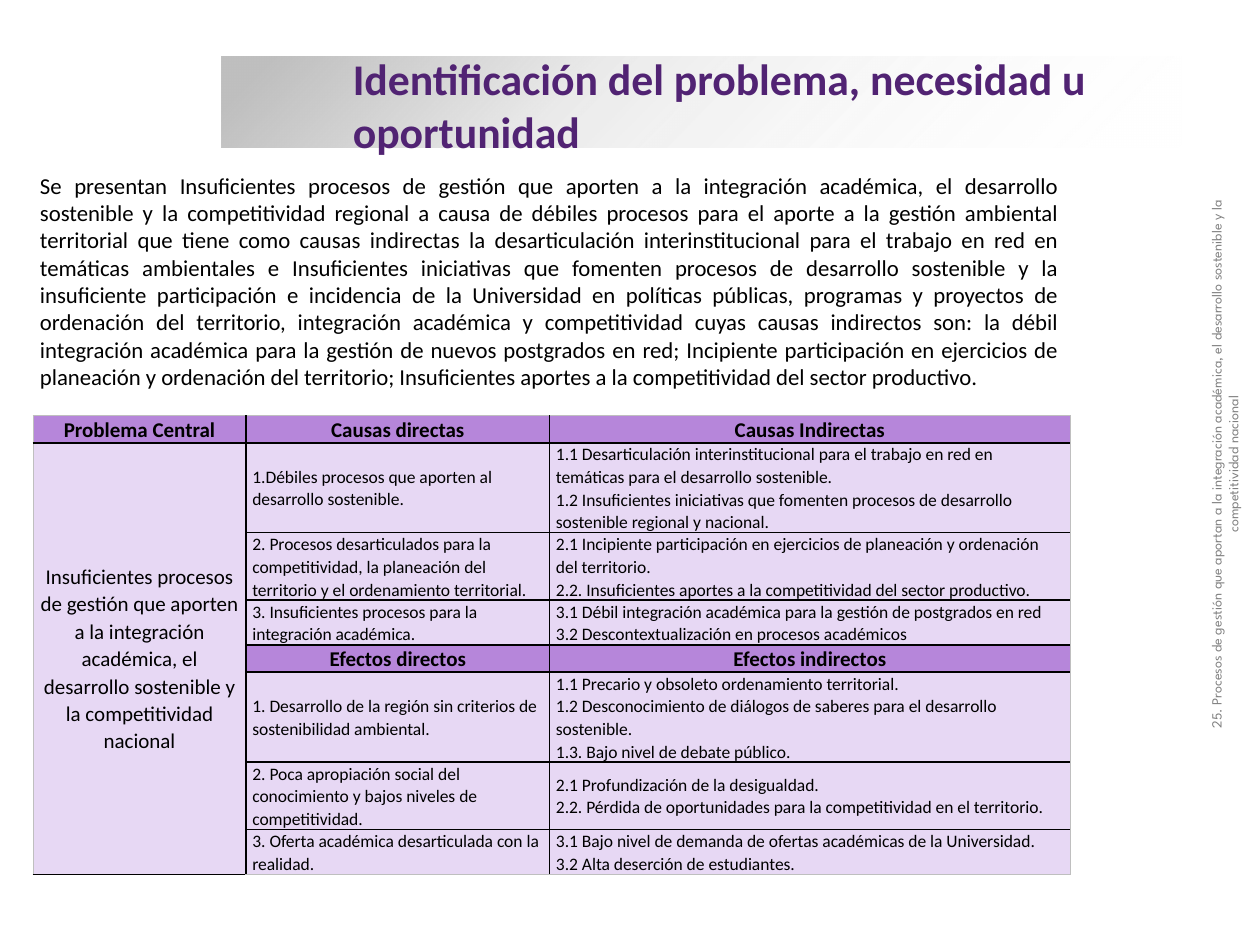
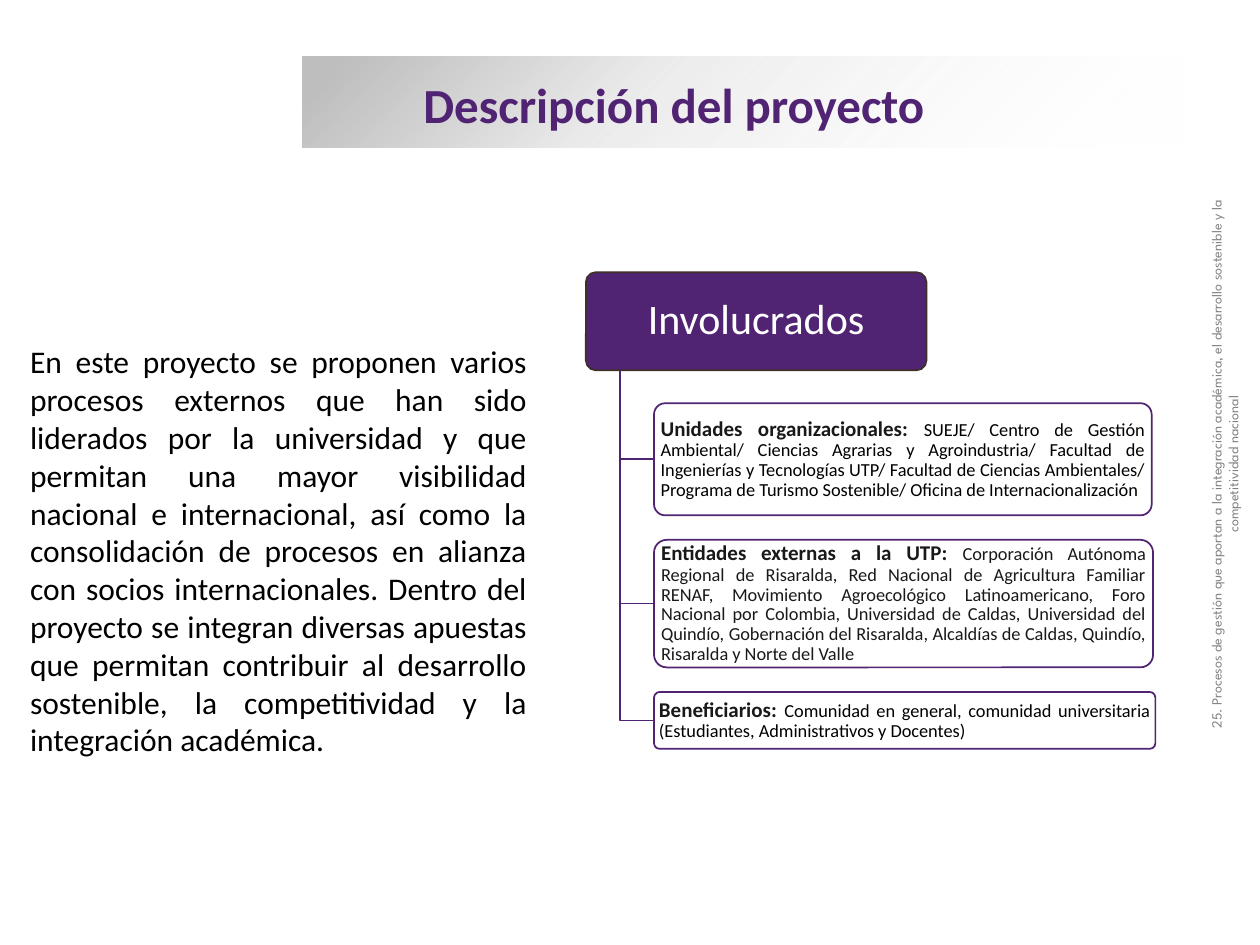
"""Build two project slides: problem table and project description."""
from lxml.etree import SubElement
from pptx import Presentation
from pptx.dml.color import RGBColor
from pptx.enum.shapes import MSO_SHAPE
from pptx.enum.text import MSO_ANCHOR, MSO_AUTO_SIZE, PP_ALIGN
from pptx.oxml import parse_xml
from pptx.oxml.ns import nsdecls, qn
from pptx.util import Pt

C = {"purple": "512373", "head": "B686DA", "cell": "E7D8F4", "black": "000000",
     "ink": "191919", "white": "FFFFFF", "band": "BFBFBF", "grey": "808080", "edge": "3F3029"}
FONT, SIDE_FONT = "Calibri", "League Spartan"
ALIGN = {"l": PP_ALIGN.LEFT, "c": PP_ALIGN.CENTER, "j": PP_ALIGN.JUSTIFY}
BAND_TOP, BAND_H, BAND_RIGHT = 32.4, 51.8, 675

SIDE_TEXT = ("25. Procesos de gestión que aportan a la integración académica, "
             "el desarrollo sostenible y la competitividad nacional")

PROBLEM_TITLE = "Identificación del problema, necesidad u oportunidad"
PROBLEM_TEXT = [
    "Se presentan Insuficientes procesos de gestión que aporten a la integración académica, "
    "el desarrollo sostenible y la competitividad regional a causa de débiles procesos para el "
    "aporte a la gestión ambiental territorial que tiene como causas indirectas la "
    "desarticulación interinstitucional para el trabajo en red en temáticas ambientales e "
    "Insuficientes iniciativas que fomenten procesos de desarrollo sostenible y",
    "la insuficiente participación e incidencia de la Universidad en políticas públicas, "
    "programas y proyectos de ordenación del territorio, integración académica y "
    "competitividad cuyas causas indirectos son: la débil integración académica para la "
    "gestión de nuevos postgrados en red; Incipiente participación en ejercicios de planeación "
    "y ordenación del territorio; Insuficientes aportes a la competitividad del sector "
    "productivo.",
]
PROBLEM_HEAD = "Problema Central"
PROBLEM = ("Insuficientes procesos de gestión que aporten a la integración académica, "
           "el desarrollo sostenible y la competitividad nacional")
COLS = [121.7, 173.5, 297.4]
HEAD_H, LINE_H = 15.4, 12.85
HEAD_ROWS = (0, 4)
ROWS = [
    (1, "Causas directas", "Causas Indirectas"),
    (4, "1.Débiles procesos que aporten al desarrollo sostenible.",
     "1.1 Desarticulación interinstitucional para el trabajo en red en temáticas para el "
     "desarrollo sostenible.\n1.2 Insuficientes iniciativas que fomenten procesos de "
     "desarrollo sostenible regional y nacional."),
    (3, "2. Procesos desarticulados para la competitividad, la planeación del territorio "
     "y el ordenamiento territorial.",
     "2.1 Incipiente participación en ejercicios de planeación y ordenación del territorio.\n"
     "2.2. Insuficientes aportes a la competitividad del sector productivo."),
    (2, "3. Insuficientes procesos para la integración académica.",
     "3.1 Débil integración académica para la gestión de postgrados en red\n"
     "3.2 Descontextualización en procesos académicos"),
    (1, "Efectos directos", "Efectos indirectos"),
    (4, "1. Desarrollo de la región sin criterios de sostenibilidad ambiental.",
     "1.1 Precario y obsoleto ordenamiento territorial.\n1.2 Desconocimiento de diálogos de "
     "saberes para el desarrollo sostenible.\n1.3. Bajo nivel de debate público."),
    (3, "2. Poca apropiación social del conocimiento y bajos niveles de competitividad.",
     "2.1 Profundización de la desigualdad.\n"
     "2.2. Pérdida de oportunidades para la competitividad en el territorio."),
    (2, "3. Oferta académica desarticulada con la realidad.",
     "3.1 Bajo nivel de demanda de ofertas académicas de la Universidad.\n"
     "3.2 Alta deserción de estudiantes."),
]

PROJECT_TITLE = "Descripción del proyecto"
PROJECT_TEXT = (
    "En este proyecto se proponen varios procesos externos que han sido liderados por la "
    "universidad y que permitan una mayor visibilidad nacional e internacional, así como la "
    "consolidación de procesos en alianza con socios internacionales. Dentro del proyecto se "
    "integran diversas apuestas que permitan contribuir al desarrollo sostenible, la "
    "competitividad y la integración académica.")
TREE_HEAD = "Involucrados"
TREE = [
    (284.4, 64.1, "black", "Unidades organizacionales: ",
     "SUEJE/ Centro de Gestión Ambiental/ Ciencias Agrarias y Agroindustria/ Facultad de "
     "Ingenierías y Tecnologías UTP/ Facultad de Ciencias Ambientales/ Programa de Turismo "
     "Sostenible/ Oficina de Internacionalización"),
    (285.2, 72.9, "ink", "Entidades externas a la UTP: ",
     "Corporación Autónoma Regional de Risaralda, Red Nacional de Agricultura Familiar RENAF, "
     "Movimiento Agroecológico Latinoamericano, Foro Nacional por Colombia, Universidad de "
     "Caldas, Universidad del Quindío, Gobernación del Risaralda, Alcaldías de Caldas, "
     "Quindío, Risaralda y Norte del Valle"),
    (286.5, 32.5, "black", "Beneficiarios: ",
     "Comunidad en general, comunidad universitaria (Estudiantes, Administrativos y Docentes)"),
]


def rgb(name):
    return RGBColor.from_string(C[name])


def pts(*values):
    return [Pt(v) for v in values]


def write(tf, text, size=10, color="black", bold=False, align="l", spacing=None, font=FONT):
    tf.word_wrap = True
    p = tf.paragraphs[0]
    p.alignment = ALIGN[align]
    if spacing:
        p.line_spacing = spacing
    for i, line in enumerate(text.split("\n")):
        if i:
            p.add_line_break()
        r = p.add_run()
        r.text = line
        r.font.name, r.font.size, r.font.bold = font, Pt(size), bold
        r.font.color.rgb = rgb(color)


def set_inset(box, x, y):
    box.margin_left = box.margin_right = Pt(x)
    box.margin_top = box.margin_bottom = Pt(y)
    box.vertical_anchor = MSO_ANCHOR.MIDDLE


def add_text(s, box, text, **fmt):
    sp = s.shapes.add_textbox(*pts(*box))
    write(sp.text_frame, text, **fmt)
    return sp


def add_band(s, left):
    sp = s.shapes.add_shape(MSO_SHAPE.RECTANGLE, *pts(left, BAND_TOP, BAND_RIGHT - left, BAND_H))
    sp.shadow.inherit = False
    sp.line.fill.background()
    sp.fill.background()
    stops = "".join(
        f'<a:gs pos="{pos}000"><a:srgbClr val="{C[c]}"><a:alpha val="{alpha}000"/></a:srgbClr></a:gs>'
        for pos, c, alpha in [(5, "band", 100), (37, "band", 31), (100, "white", 0)])
    grad = parse_xml(f'<a:gradFill {nsdecls("a")} rotWithShape="1"><a:gsLst>{stops}</a:gsLst>'
                     '<a:lin ang="2700000" scaled="0"/></a:gradFill>')
    spPr = sp.element.spPr
    spPr.replace(spPr.find(qn("a:noFill")), grad)
    return sp


def add_slide(prs, title, size, box, band_left):
    s = prs.slides.add_slide(prs.slide_layouts[5])
    sp = s.shapes.title
    sp.left, sp.top, sp.width, sp.height = pts(*box)
    tf = sp.text_frame
    tf.auto_size = MSO_AUTO_SIZE.NONE
    set_inset(tf, 7.2, 3.6)
    write(tf, title, size=size, color="purple", bold=True)
    sp.element.addprevious(add_band(s, band_left).element)
    side = add_text(s, (525.6, 252, 348.5, 26.6), SIDE_TEXT, size=8, color="grey",
                    align="c", font=SIDE_FONT)
    side.rotation = 270
    return s


def set_borders(cell, edges):
    tcPr = cell._tc.get_or_add_tcPr()
    for i, (tag, outer) in enumerate(edges.items()):
        width, color = (6350, "band") if outer else (12700, "black")
        ln = parse_xml(f'<a:{tag} {nsdecls("a")} w="{width}"/>')
        fill = SubElement(ln, qn("a:solidFill"))
        SubElement(fill, qn("a:srgbClr"), val=C[color])
        tcPr.insert(i, ln)


def fill_cell(cell, text, head=False, center=False):
    big = head or center
    set_inset(cell, 2.9 if big else 3.6, 0)
    write(cell.text_frame, text, size=12 if big else 10, bold=head,
          align="c" if big else "l", spacing=1.07)


def add_problem_table(s):
    heights = [HEAD_H if r in HEAD_ROWS else LINE_H * row[0] for r, row in enumerate(ROWS)]
    t = s.shapes.add_table(len(ROWS), len(COLS),
                           *pts(18.9, 237.6, sum(COLS), sum(heights))).table
    t.first_row = t.horz_banding = False
    for col, w in zip(t.columns, COLS):
        col.width = Pt(w)
    last_r, last_c = len(ROWS) - 1, len(COLS) - 1
    t.cell(1, 0).merge(t.cell(last_r, 0))
    fill_cell(t.cell(0, 0), PROBLEM_HEAD, head=True)
    fill_cell(t.cell(1, 0), PROBLEM, center=True)
    for r, (_, *texts) in enumerate(ROWS):
        t.rows[r].height = Pt(heights[r])
        for c, text in enumerate(texts, 1):
            fill_cell(t.cell(r, c), text, head=r in HEAD_ROWS)
        for c in range(len(COLS)):
            cell = t.cell(r, c)
            head = r == 0 or (r in HEAD_ROWS and c > 0)
            cell.fill.solid()
            cell.fill.fore_color.rgb = rgb("head" if head else "cell")
            set_borders(cell, {"lnL": c == 0, "lnR": c == last_c,
                               "lnT": r == 0, "lnB": r == last_r})


def add_card(s, box, fill, line, opacity=100):
    sp = s.shapes.add_shape(MSO_SHAPE.ROUNDED_RECTANGLE, *pts(*box))
    sp.adjustments[0] = 0.1
    sp.shadow.inherit = False
    sp.fill.solid()
    sp.fill.fore_color.rgb = rgb(fill)
    if opacity < 100:
        clr = sp.element.spPr.find(qn("a:solidFill"))[0]
        SubElement(clr, qn("a:alpha"), val=f"{opacity}000")
    sp.line.color.rgb = rgb(line)
    sp.line.width = Pt(1)
    set_inset(sp.text_frame, 1.9, 1.4)
    return sp.text_frame


def add_branch(s, x, top, right, bottom):
    builder = s.shapes.build_freeform(Pt(x), Pt(top))
    builder.add_line_segments([pts(x, bottom), pts(right, bottom)], close=False)
    sp = builder.convert_to_shape()
    sp.shadow.inherit = False
    sp.fill.background()
    sp.line.color.rgb = rgb("purple")
    sp.line.width = Pt(1)


def add_tree(s):
    left, top, width, height = 334.8, 155.6, 194.6, 56
    tf = add_card(s, (left, top, width, height), "purple", "edge")
    write(tf, TREE_HEAD, size=24, color="white", align="c", spacing=0.9)
    trunk_x, card_x = left + width * 0.1, left + width * 0.2
    trunk_top, y, gap = top + height, 230.4, 14
    for w, h, color, label, text in TREE:
        add_branch(s, trunk_x, trunk_top, card_x, y + h / 2)
        tf = add_card(s, (card_x, y, w, h), "white", "purple", opacity=90)
        write(tf, label, size=12, color="ink", bold=True, align="j", spacing=0.9)
        write(tf, text, size=10.5, color=color, align="j", spacing=0.9)
        y += h + gap


def main():
    prs = Presentation()
    prs.slide_width, prs.slide_height = pts(720, 540)

    s = add_slide(prs, PROBLEM_TITLE, 25, (194.4, 24.5, 486, 70.6), 126.7)
    add_text(s, (15.8, 94.3, 595.4, 133.2), " ".join(PROBLEM_TEXT), size=13, align="j")
    add_problem_table(s)

    s = add_slide(prs, PROJECT_TITLE, 28, (234.7, 38.9, 446.4, 41), 172.8)
    add_tree(s)
    add_text(s, (10.1, 192.2, 298.1, 247), PROJECT_TEXT, size=18, align="j")

    prs.save("out.pptx")


if __name__ == "__main__":
    main()
